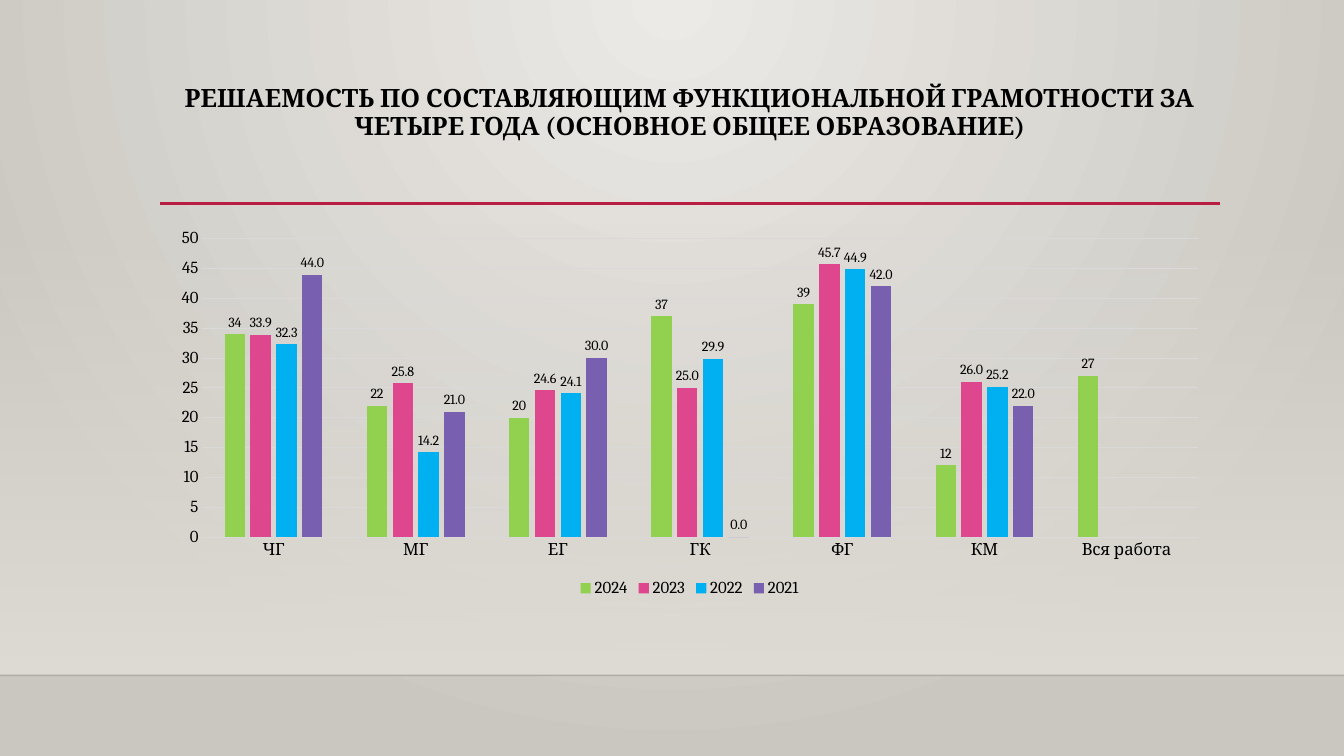
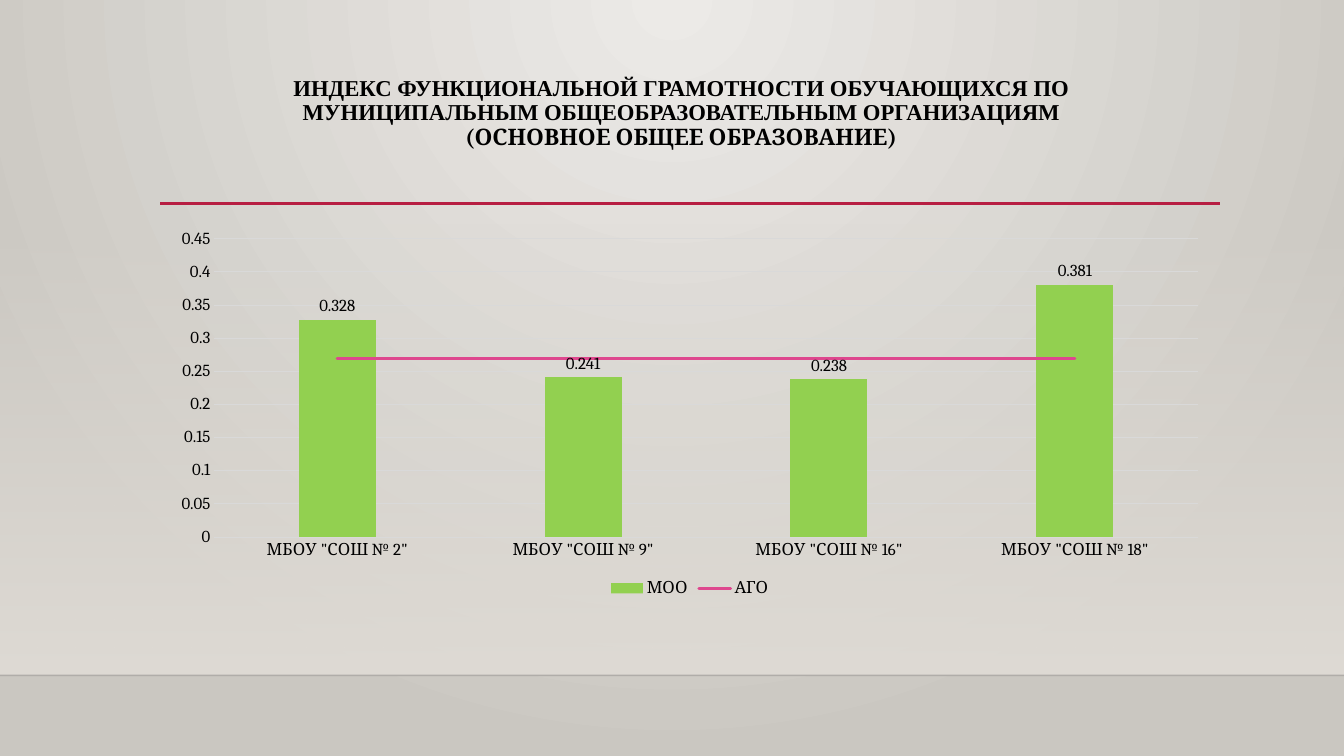
from dataclasses import dataclass
from typing import Any, Optional

from lxml import etree
from pptx import Presentation
from pptx import util as u
from pptx.chart import data as cd
from pptx.dml.color import RGBColor
from pptx.enum import chart as ce, shapes, text
from pptx.oxml import parse_xml
from pptx.oxml import ns

# Shared look
WIDE, HIGH = u.Inches(13.33), u.Inches(7.5)
SERIF, ROMAN = "Cambria", "Times New Roman"
BLACK = RGBColor(0x00, 0x00, 0x00)
EDGE = RGBColor(0x00, 0x00, 0x01)
RED = RGBColor(0xB7, 0x1E, 0x42)
GRID = RGBColor(0xD9, 0xD9, 0xD9)
LIGHT = RGBColor(0xEC, 0xEA, 0xE7)
DARK = RGBColor(0xCA, 0xC7, 0xC1)
SAND = RGBColor(0xDF, 0xDB, 0xD5)
GREEN = RGBColor(0x92, 0xD0, 0x50)
PINK = RGBColor(0xDE, 0x47, 0x8E)
BLUE = RGBColor(0x00, 0xB0, 0xF0)
PLUM = RGBColor(0x79, 0x5F, 0xAF)


@dataclass(frozen=True)
class Box:
    """Place and size in percent of the slide."""
    x: float
    y: float
    w: float
    h: float

    def emu(self) -> tuple[int, int, int, int]:
        return (int(WIDE * self.x / 100), int(HIGH * self.y / 100),
                int(WIDE * self.w / 100), int(HIGH * self.h / 100))


@dataclass(frozen=True)
class Rule:
    box: Box
    tint: RGBColor
    thick: float
    alpha: int = 100


@dataclass(frozen=True)
class Row:
    words: str
    face: str = SERIF


@dataclass(frozen=True)
class Head:
    box: Box
    size: float
    rows: list[Row]


@dataclass(frozen=True)
class Set:
    name: str
    vals: list[Optional[float]]
    tint: RGBColor
    form: str = "General"
    line: bool = False


@dataclass(frozen=True)
class Graph:
    cats: list[str]
    sets: list[Set]
    top: float
    step: float
    size: float


PLOT = Box(11.93, 29.33, 78.77, 50.27)
BAND = Box(0, 29.47, 100, 59.86)
RULES = [Rule(Box(0, 89.33, 100, 0), EDGE, 1, 20),
         Rule(Box(11.93, 26.93, 78.84, 0), RED, 2.5)]

PAGES = [
    (Head(Box(11.93, 5.33, 78.77, 19.33), 18, [
        Row("РЕШАЕМОСТЬ ПО СОСТАВЛЯЮЩИМ ФУНКЦИОНАЛЬНОЙ ГРАМОТНОСТИ "
            "ЗА ЧЕТЫРЕ ГОДА (ОСНОВНОЕ ОБЩЕЕ ОБРАЗОВАНИЕ)")]),
     Graph(["ЧГ", "МГ", "ЕГ", "ГК", "ФГ", "КМ", "Вся работа"], [
         Set("2024", [34, 22, 20, 37, 39, 12, 27], GREEN),
         Set("2023", [33.9, 25.8, 24.6, 25, 45.7, 26, None], PINK, "0.0"),
         Set("2022", [32.3, 14.2, 24.1, 29.9, 44.9, 25.2, None], BLUE, "0.0"),
         Set("2021", [44, 21, 30, 0, 42, 22, None], PLUM, "0.0")],
         50, 5, 10)),
    (Head(Box(16.92, 5.33, 67.5, 19.33), 16.2, [
        Row("ИНДЕКС ФУНКЦИОНАЛЬНОЙ ГРАМОТНОСТИ ОБУЧАЮЩИХСЯ ПО "
            "МУНИЦИПАЛЬНЫМ ОБЩЕОБРАЗОВАТЕЛЬНЫМ ОРГАНИЗАЦИЯМ", ROMAN),
        Row("(ОСНОВНОЕ ОБЩЕЕ ОБРАЗОВАНИЕ)")]),
     Graph([f'МБОУ "СОШ № {num}"' for num in (2, 9, 16, 18)], [
         Set("МОО", [0.328, 0.241, 0.238, 0.381], GREEN),
         Set("АГО", [0.27] * 4, PINK, line=True)],
         0.45, 0.05, 12)),
]


def put(item: Any, vals: dict[str, Any]) -> None:
    for key, val in vals.items():
        setattr(item, key, val)


def style(font: Any, size: float, face: str = SERIF, bold: bool = False) -> None:
    put(font, {"size": u.Pt(size), "name": face, "bold": bold})
    font.color.rgb = BLACK


def stroke(line: Any, tint: RGBColor, thick: float) -> None:
    line.color.rgb = tint
    line.width = u.Pt(thick)


def blend(fill: Any, root: Any, stops: list[tuple[RGBColor, int]],
          kind: str) -> None:
    """Swap a cleared fill for a gradient of (colour, opacity) stops."""
    fill.background()
    last = len(stops) - 1
    marks = "".join(
        f'<a:gs pos="{100000 * i // last}"><a:srgbClr val="{tint}">'
        f'<a:alpha val="{alpha * 1000}"/></a:srgbClr></a:gs>'
        for i, (tint, alpha) in enumerate(stops))
    old = root.find(".//" + ns.qn("a:noFill"))
    new = parse_xml(f'<a:gradFill {ns.nsdecls("a")} rotWithShape="1">'
                    f'<a:gsLst>{marks}</a:gsLst>{kind}</a:gradFill>')
    old.getparent().replace(old, new)


def frame(slide: Any) -> None:
    # Floor band
    band = slide.shapes.add_shape(shapes.MSO_SHAPE.RECTANGLE, *BAND.emu())
    band.shadow.inherit = False
    band.line.fill.background()
    blend(band.fill, band._element.spPr, [(SAND, 0), (SAND, 100)],
          '<a:lin ang="5400000" scaled="0"/>')
    # Floor edge and title rule
    for rule in RULES:
        x, y, w, h = rule.box.emu()
        wire = slide.shapes.add_connector(
            shapes.MSO_CONNECTOR.STRAIGHT, x, y, x + w, y + h)
        stroke(wire.line, rule.tint, rule.thick)
        props = wire._element.spPr
        etree.SubElement(props, ns.qn("a:effectLst"))
        for tint in props.iter(ns.qn("a:srgbClr")):
            etree.SubElement(tint, ns.qn("a:alpha"), val=str(rule.alpha * 1000))


def title(slide: Any, head: Head) -> None:
    body = slide.shapes.add_textbox(*head.box.emu()).text_frame
    put(body, {"word_wrap": True, "vertical_anchor": text.MSO_ANCHOR.MIDDLE})
    para = body.paragraphs[0]
    put(para, {"alignment": text.PP_ALIGN.CENTER, "line_spacing": 0.9})
    for i, row in enumerate(head.rows):
        if i:
            para.add_line_break()
        run = para.add_run()
        run.text = row.words
        style(run.font, head.size, row.face, True)


def split(chart: Any, spot: int) -> Any:
    """Move one column series to a line plot on the same axes."""
    bars = chart.plots[0]._element
    ser = bars.findall(ns.qn("c:ser"))[spot]
    for node in ser.findall(ns.qn("c:invertIfNegative")):
        ser.remove(node)
    ids = "".join(f'<c:axId val="{axis.get("val")}"/>'
                  for axis in bars.findall(ns.qn("c:axId")))
    line = parse_xml(f'<c:lineChart {ns.nsdecls("c")}>'
                     '<c:grouping val="standard"/><c:varyColors val="0"/>'
                     f'<c:marker val="1"/>{ids}</c:lineChart>')
    line.insert(2, ser)
    bars.addnext(line)
    return chart.plots[1].series[0]


def graph(slide: Any, spec: Graph) -> None:
    data = cd.CategoryChartData()
    data.categories = spec.cats
    for item in spec.sets:
        data.add_series(item.name, item.vals, item.form)
    chart = slide.shapes.add_chart(
        ce.XL_CHART_TYPE.COLUMN_CLUSTERED, *PLOT.emu(), data).chart
    style(chart.font, 12)
    put(chart, {"has_title": False, "has_legend": True})
    put(chart.legend, {"position": ce.XL_LEGEND_POSITION.BOTTOM,
                       "include_in_layout": False})
    style(chart.legend.font, 12)
    put(chart.plots[0], {"gap_width": 219, "overlap": -27,
                         "vary_by_categories": False})

    # Axes
    cats, vals = chart.category_axis, chart.value_axis
    for axis in (cats, vals):
        put(axis, {"major_tick_mark": ce.XL_TICK_MARK.NONE,
                   "minor_tick_mark": ce.XL_TICK_MARK.NONE})
        style(axis.tick_labels.font, 12)
    put(vals, {"minimum_scale": 0, "maximum_scale": spec.top,
               "major_unit": spec.step, "has_major_gridlines": True})
    put(vals.tick_labels, {"number_format": "General",
                           "number_format_is_linked": False})
    vals.format.line.fill.background()
    for line in (cats.format.line, vals.major_gridlines.format.line):
        stroke(line, GRID, 0.75)

    # Series
    for i, (item, ser) in enumerate(zip(spec.sets, list(chart.plots[0].series))):
        if item.line:
            ser = split(chart, i)
            ser.smooth = False
            ser.marker.style = ce.XL_MARKER_STYLE.NONE
            stroke(ser.format.line, item.tint, 2.25)
            for edge in ser._element.iter(ns.qn("a:ln")):
                edge.set("cap", "rnd")
            continue
        ser.format.fill.solid()
        ser.format.fill.fore_color.rgb = item.tint
        ser.invert_if_negative = False
        tags = ser.data_labels
        put(tags, {"show_value": True, "number_format": item.form,
                   "number_format_is_linked": False,
                   "position": ce.XL_LABEL_POSITION.OUTSIDE_END})
        style(tags.font, spec.size)


def main() -> None:
    deck = Presentation()
    put(deck, {"slide_width": WIDE, "slide_height": HIGH})
    base = deck.slide_master
    blend(base.background.fill, base._element.cSld, [(LIGHT, 100), (DARK, 100)],
          '<a:path path="circle"><a:fillToRect l="43000" t="0" r="43000" '
          'b="100000"/></a:path>')
    for head, spec in PAGES:
        slide = deck.slides.add_slide(deck.slide_layouts[6])
        frame(slide)
        title(slide, head)
        graph(slide, spec)
    deck.save("out.pptx")


if __name__ == "__main__":
    main()
